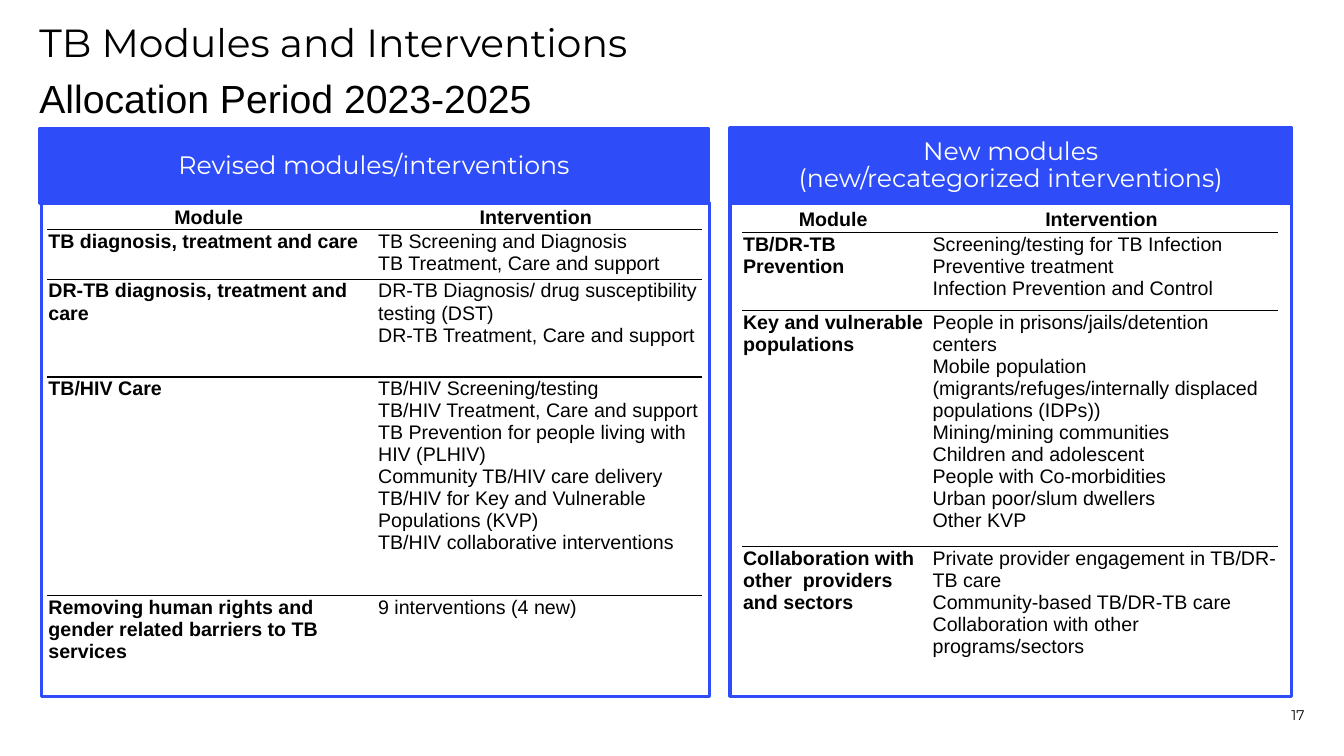
"""Builds the slide on TB modules and interventions for 2023-2025."""
import lxml.etree
import pptx
import pptx.dml.color
import pptx.enum.shapes
import pptx.enum.text
import pptx.oxml.ns
import pptx.util

PX = 9144
SLIDE = (1333, 750)
COLORS = {"blue": "2E4DF9", "black": "000000", "white": "FFFFFF"}
DISPLAY, BODY = "Montserrat", "Arial"
RULE_PT, FRAME_PT = 1, 2.25
INSET, INDENT = 1, 8

TITLE_BOX = (39, 23, 1236, 100)
TITLE = [("TB Modules and Interventions", DISPLAY), ("Allocation Period 2023-2025", BODY)]
PAGE_BOX = (1196, 678, 98, 40)
PAGE = "17"
HEADINGS = ("Module", "Intervention")

PANELS = [
    {
        "banner": ["Revised modules/interventions"],
        "banner_box": (39, 128, 664, 74),
        "frame_box": (41, 201, 663, 490),
        "origin": (47, 203),
        "columns": (320, 329),
        "rows": (25, 49, 97, 217, 73),
        "modules": [
            ("TB diagnosis, treatment and care",
             ["TB Screening and Diagnosis", "TB Treatment, Care and support"]),
            ("DR-TB diagnosis, treatment and care",
             ["DR-TB Diagnosis/ drug susceptibility testing (DST)",
              "DR-TB Treatment, Care and support"]),
            ("TB/HIV Care",
             ["TB/HIV Screening/testing",
              "TB/HIV Treatment, Care and support",
              "TB Prevention for people living with HIV (PLHIV)",
              "Community TB/HIV care delivery",
              "TB/HIV for Key and Vulnerable Populations (KVP)",
              "TB/HIV collaborative interventions"]),
            ("Removing human rights and gender related barriers to TB services",
             ["9 interventions (4 new)"]),
        ],
    },
    {
        "banner": ["New modules", "(new/recategorized interventions)"],
        "banner_box": (724, 127, 557, 75),
        "frame_box": (724, 201, 557, 490),
        "origin": (736, 203),
        "columns": (181, 351),
        "rows": (28, 77, 229, 127),
        "modules": [
            ("TB/DR-TB Prevention",
             ["Screening/testing for TB Infection", "Preventive treatment",
              "Infection Prevention and Control"]),
            ("Key and vulnerable populations",
             ["People in prisons/jails/detention centers",
              "Mobile population (migrants/refuges/internally displaced populations (IDPs))",
              "Mining/mining communities",
              "Children and adolescent",
              "People with Co-morbidities",
              "Urban poor/slum dwellers",
              "Other KVP"]),
            ("Collaboration with other  providers and sectors",
             ["Private provider engagement in TB/DR-TB care",
              "Community-based TB/DR-TB care",
              "Collaboration with other programs/sectors"]),
        ],
    },
]

ALIGN = pptx.enum.text.PP_ALIGN
ANCHOR = pptx.enum.text.MSO_ANCHOR


def emu(lengths):
    return [pptx.util.Emu(length * PX) for length in lengths]


def rgb(name):
    return pptx.dml.color.RGBColor.from_string(COLORS[name])


def write(frame, lines, size, color="black", bold=False, align=ALIGN.LEFT, spacing=1.0, gap=0):
    for number, (words, font) in enumerate(lines):
        paragraph = frame.add_paragraph() if number else frame.paragraphs[0]
        paragraph.alignment = align
        paragraph.line_spacing = spacing
        paragraph.space_before = pptx.util.Pt(gap if number else 0)
        run = paragraph.add_run()
        run.text = words
        run.font.name = font
        run.font.size = pptx.util.Pt(size)
        run.font.bold = bold
        run.font.color.rgb = rgb(color)


def prepare(frame, anchor):
    frame.word_wrap = True
    frame.vertical_anchor = anchor
    frame.margin_left = frame.margin_top = frame.margin_right = frame.margin_bottom = 0


def add_text(slide, box, anchor):
    frame = slide.shapes.add_textbox(*emu(box)).text_frame
    prepare(frame, anchor)
    return frame


def add_rectangle(slide, box, filled):
    shape = slide.shapes.add_shape(pptx.enum.shapes.MSO_SHAPE.RECTANGLE, *emu(box))
    shape.shadow.inherit = False
    if filled:
        shape.fill.solid()
        shape.fill.fore_color.rgb = rgb("blue")
    else:
        shape.fill.background()
    shape.line.color.rgb = rgb("blue")
    shape.line.width = pptx.util.Pt(FRAME_PT)
    return shape


def set_borders(cell, ruled):
    qn = pptx.oxml.ns.qn
    properties = cell._tc.get_or_add_tcPr()
    for position, side in enumerate(("lnL", "lnR", "lnT", "lnB")):
        line = lxml.etree.Element(qn("a:" + side), w=str(pptx.util.Pt(RULE_PT)))
        if side in ruled:
            fill = lxml.etree.SubElement(line, qn("a:solidFill"))
            lxml.etree.SubElement(fill, qn("a:srgbClr"), val=COLORS["black"])
        else:
            lxml.etree.SubElement(line, qn("a:noFill"))
        properties.insert(position, line)


def add_modules(slide, panel):
    columns, rows = panel["columns"], panel["rows"]
    box = (*panel["origin"], sum(columns), sum(rows))
    table = slide.shapes.add_table(len(rows), len(columns), *emu(box)).table
    for column, width in zip(table.columns, emu(columns)):
        column.width = width
    for row, height in zip(table.rows, emu(rows)):
        row.height = height
    contents = [[[heading] for heading in HEADINGS]]
    contents += [[[module], interventions] for module, interventions in panel["modules"]]
    for r, entries in enumerate(contents):
        for c, lines in enumerate(entries):
            cell = table.cell(r, c)
            header, indented = r == 0, r > 0 and c == 1
            left, inset = emu((INDENT if indented else INSET, INSET))
            cell.margin_left, cell.margin_top, cell.margin_right = left, inset, inset
            cell.margin_bottom = 0
            cell.vertical_anchor = ANCHOR.MIDDLE if header else ANCHOR.TOP
            cell.fill.background()
            ruled = {"lnT"} if r else set()
            if r < len(rows) - 1:
                ruled.add("lnB")
            set_borders(cell, ruled)
            write(cell.text_frame, [(line, BODY) for line in lines], 14, bold=not indented,
                  align=ALIGN.CENTER if header else ALIGN.LEFT)


def main():
    deck = pptx.Presentation()
    deck.slide_width, deck.slide_height = emu(SLIDE)
    slide = deck.slides.add_slide(deck.slide_layouts[6])
    write(add_text(slide, TITLE_BOX, ANCHOR.TOP), TITLE, 28, spacing=0.9, gap=10)
    write(add_text(slide, PAGE_BOX, ANCHOR.BOTTOM), [(PAGE, DISPLAY)], 10, align=ALIGN.RIGHT)
    for panel in PANELS:
        banner = add_rectangle(slide, panel["banner_box"], True).text_frame
        prepare(banner, ANCHOR.MIDDLE)
        write(banner, [(line, DISPLAY) for line in panel["banner"]], 18, "white",
              align=ALIGN.CENTER, spacing=0.9)
        add_rectangle(slide, panel["frame_box"], False)
        add_modules(slide, panel)
    deck.save("out.pptx")


if __name__ == "__main__":
    main()
